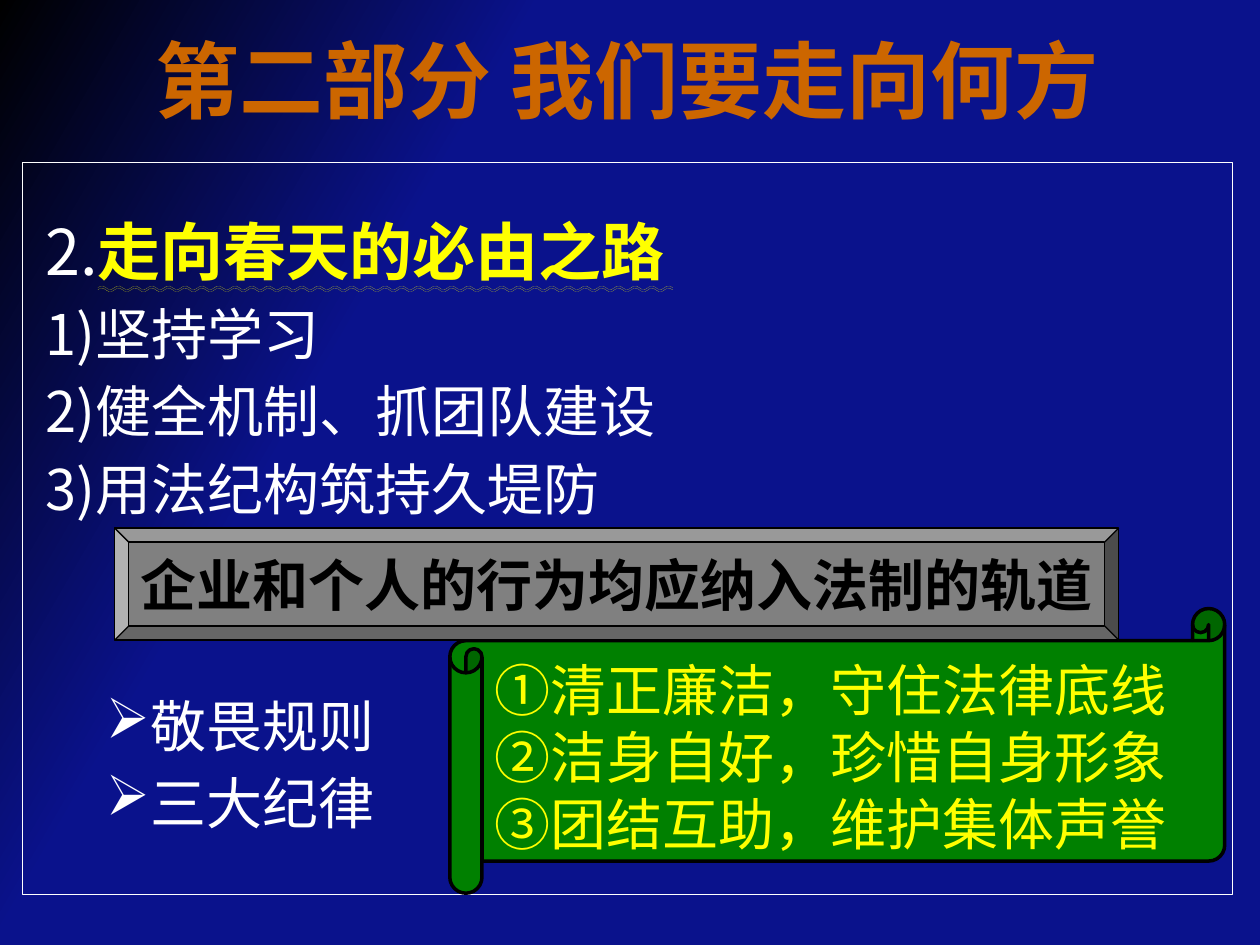
from lxml import etree
from pptx import Presentation
from pptx.dml.color import RGBColor
from pptx.enum.shapes import MSO_SHAPE
from pptx.enum.text import MSO_ANCHOR, MSO_UNDERLINE, PP_ALIGN
from pptx.oxml.ns import qn
from pptx.util import Inches, Pt

RECTANGLE, SCROLL, BEVEL = MSO_SHAPE.RECTANGLE, MSO_SHAPE.HORIZONTAL_SCROLL, MSO_SHAPE.BEVEL
TOP, MIDDLE = MSO_ANCHOR.TOP, MSO_ANCHOR.MIDDLE
LEFT, CENTER = PP_ALIGN.LEFT, PP_ALIGN.CENTER
WAVY = MSO_UNDERLINE.WAVY_DOUBLE_LINE

THEME = {
    "night": "000000", "blue": "0A128C", "orange": "CC6600", "white": "FFFFFF",
    "yellow": "FFFF00", "green": "008000", "gray": "808080", "black": "000000",
    "font": "Noto Sans CJK SC", "scroll_font": "Noto Sans CJK JP",
    "title_size": 48, "heading_size": 36, "text_size": 32,
}


def add_run(paragraph, text, size, color, font="font", **formats):
    run = paragraph.add_run()
    run.text = text
    run.font.size = Pt(THEME[size])
    run.font.color.rgb = RGBColor.from_string(THEME[color])
    run.font.name = THEME[font]
    for name, value in formats.items():
        setattr(run.font, name, value)
    east_asian = etree.SubElement(run.font._element, qn("a:ea"))
    east_asian.set("typeface", THEME[font])


def add_panel(kind, box, fill, line, width, frame_formats):
    shape = slide.shapes.add_shape(kind, *map(Inches, box))
    shape.shadow.inherit = False
    if fill:
        shape.fill.solid()
        shape.fill.fore_color.rgb = RGBColor.from_string(THEME[fill])
    else:
        shape.fill.background()
    shape.line.color.rgb = RGBColor.from_string(THEME[line])
    shape.line.width = Pt(width)
    for name, value in frame_formats.items():
        setattr(shape.text_frame, name, value)
    return shape


presentation = Presentation()
presentation.slide_width, presentation.slide_height = Inches(10), Inches(7.5)
slide = presentation.slides.add_slide(presentation.slide_layouts[5])

# Background: dark corner fading into blue
background = slide.background.fill
background.gradient()
background.gradient_angle = 330
for stop, position, color in zip(background.gradient_stops, (0, 0.3), ("night", "blue")):
    stop.position = position
    stop.color.rgb = RGBColor.from_string(THEME[color])

# Title
title = slide.shapes.title
title.left, title.top, title.width, title.height = map(Inches, (0.18, 0, 9.6, 1.25))
title.text_frame.vertical_anchor = MIDDLE
paragraph = title.text_frame.paragraphs[0]
paragraph.alignment = CENTER
add_run(paragraph, "第二部分 我们要走向何方", "title_size", "orange", bold=True)

# Outlined body with numbered points and bullets
body = add_panel(RECTANGLE, (0.18, 1.29, 9.6, 5.81), None, "white", 0.75, {
    "word_wrap": True, "vertical_anchor": TOP,
    "margin_left": Inches(0.08), "margin_right": Inches(0.08),
    "margin_top": Inches(0.04), "margin_bottom": Inches(0.04),
})
heading = body.text_frame.paragraphs[0]
heading.alignment = LEFT
heading.line_spacing = Pt(69)
heading._p.get_or_add_pPr().set("marL", str(Inches(0.1)))
add_run(heading, "2.", "heading_size", "white")
add_run(heading, "走向春天的必由之路", "heading_size", "yellow", bold=True, underline=WAVY)

# Text, space before, left margin, bullet
points = [
    ("1)坚持学习", 6.5, 0.1, None),
    ("2)健全机制、抓团队建设", 6.5, 0.1, None),
    ("3)用法纪构筑持久堤防", 6.5, 0.1, None),
    ("敬畏规则", 97, 0.58, "➢"),
    ("三大纪律", 6.5, 0.58, "➢"),
]
for text, space, margin, bullet in points:
    paragraph = body.text_frame.add_paragraph()
    paragraph.alignment = LEFT
    paragraph.line_spacing = Pt(38)
    paragraph.space_before = Pt(space)
    properties = paragraph._p.get_or_add_pPr()
    properties.set("marL", str(Inches(margin)))
    properties.set("indent", "0")
    if bullet:
        etree.SubElement(properties, qn("a:buChar")).set("char", bullet)
    add_run(paragraph, text, "text_size", "white")

# Green scroll with three rules
scroll = add_panel(SCROLL, (3.57, 4.83, 6.15, 2.26), "green", "black", 2, {
    "word_wrap": False, "vertical_anchor": MIDDLE, "margin_top": Inches(0.13),
})
scroll.adjustments[0] = 0.113
rules = ["①清正廉洁，守住法律底线", "②洁身自好，珍惜自身形象", "③团结互助，维护集体声誉"]
for index, rule in enumerate(rules):
    frame = scroll.text_frame
    paragraph = frame.add_paragraph() if index else frame.paragraphs[0]
    paragraph.alignment = LEFT
    paragraph.line_spacing = Pt(38.4)
    add_run(paragraph, rule[0], "text_size", "yellow")
    add_run(paragraph, rule[1:], "text_size", "yellow", "scroll_font")

# Gray beveled banner
banner = add_panel(BEVEL, (0.91, 4.19, 7.97, 0.89), "gray", "black", 0.75, {
    "word_wrap": False, "vertical_anchor": MIDDLE,
})
banner.adjustments[0] = 0.125
paragraph = banner.text_frame.paragraphs[0]
paragraph.alignment = CENTER
add_run(paragraph, "企业和个人的行为均应纳入法制的轨道", "text_size", "black", bold=True)

presentation.save("out.pptx")
